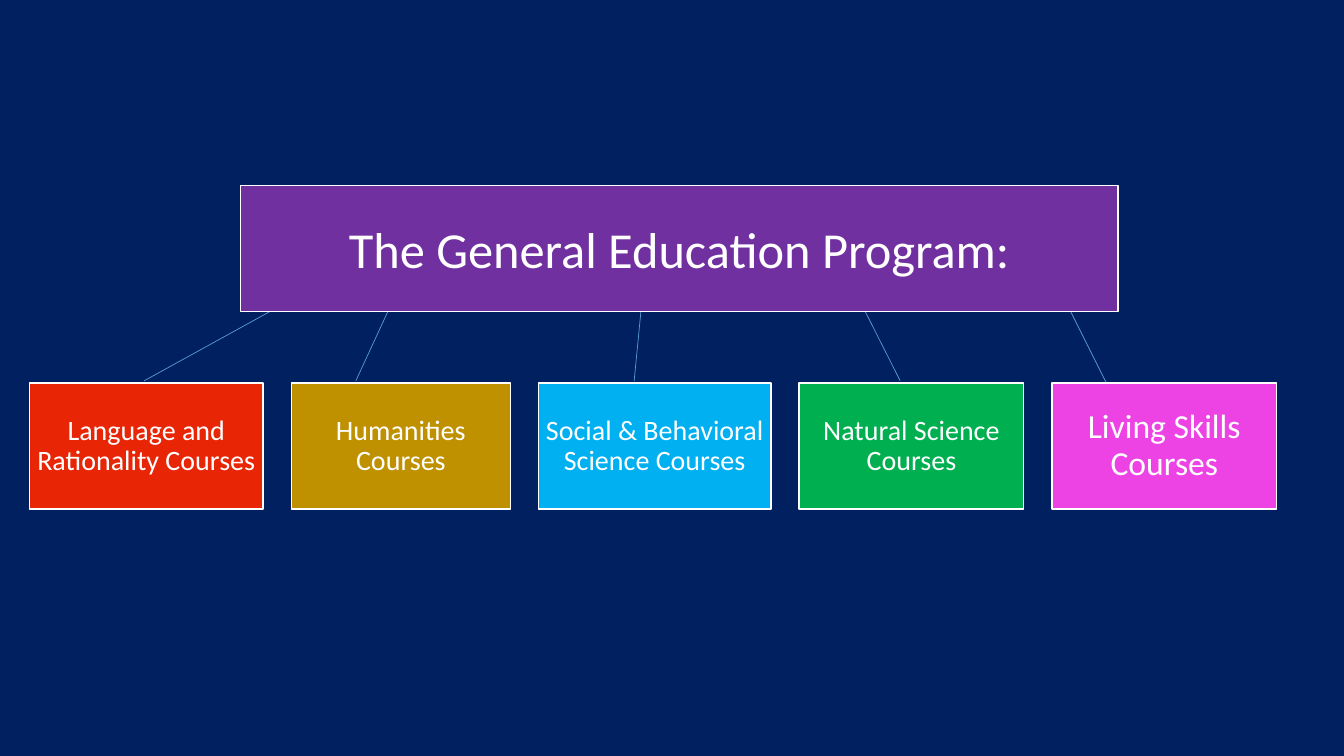
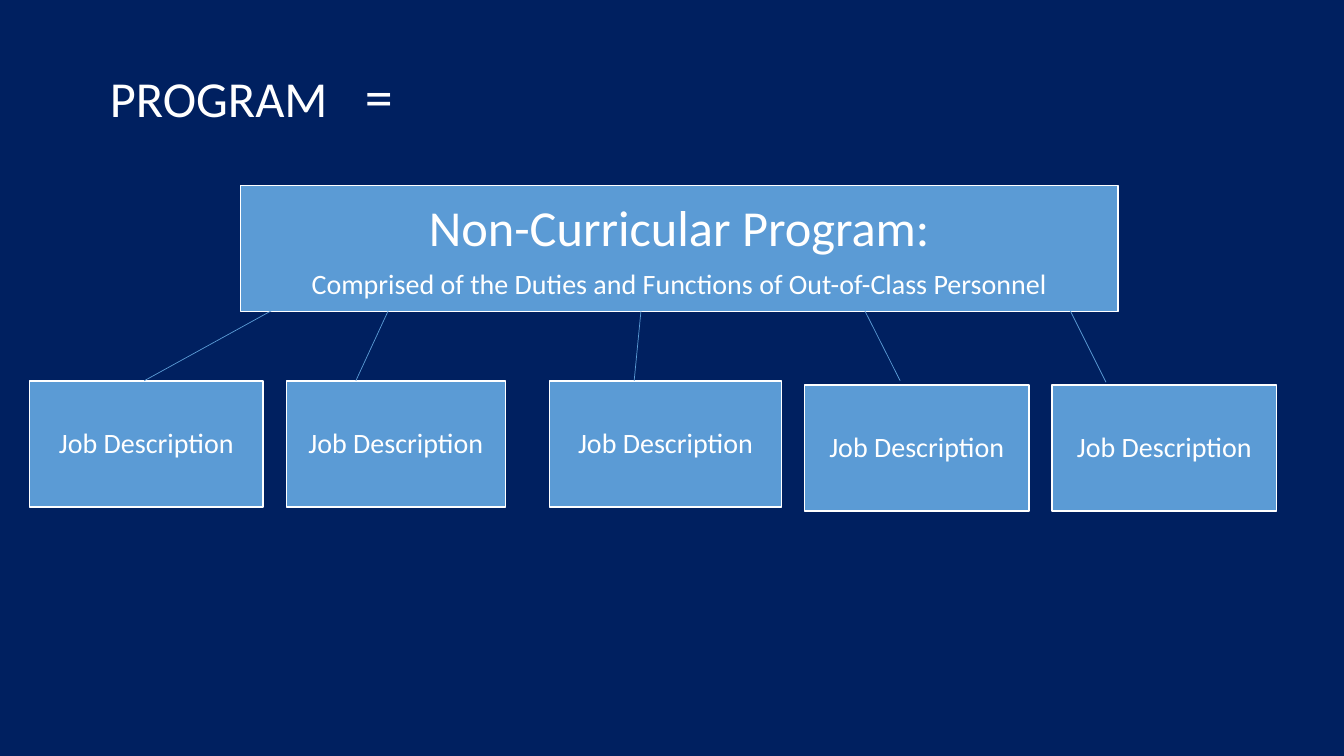
"""Builds two slides that show programs as trees of parts."""
from dataclasses import dataclass

from lxml import etree
from pptx import Presentation
from pptx.dml.color import RGBColor
from pptx.enum.shapes import MSO_CONNECTOR, MSO_SHAPE
from pptx.enum.text import MSO_ANCHOR, MSO_AUTO_SIZE, PP_ALIGN
from pptx.oxml.ns import qn
from pptx.util import Pt

RECT = MSO_SHAPE.RECTANGLE
STRAIGHT = MSO_CONNECTOR.STRAIGHT
MIDDLE = MSO_ANCHOR.MIDDLE
GROW = MSO_AUTO_SIZE.SHAPE_TO_FIT_TEXT
CENTER = PP_ALIGN.CENTER


@dataclass(frozen=True)
class Theme:
    """Holds the colours, font and type sizes of the deck."""
    back: str = "002060"
    ink: str = "FFFFFF"
    blue: str = "5B9BD5"
    purple: str = "7030A0"
    red: str = "E82606"
    gold: str = "BF9000"
    sky: str = "00B0F0"
    green: str = "00B050"
    pink: str = "ED43E5"
    font: str = "Calibri"
    sign: int = 40
    title: int = 36
    large: int = 24
    body: int = 20


THEME = Theme()
HEAD = (172, 132.5, 626.5, 90)
LEFT, TOP, GAP, HIGH = 21, 273.6, 20.1, 90
WIDTHS = (167, 156.5, 166, 160.5, 160.5)
LINKS = (
    (103, 272, 212.5, 211.7),
    (254.2, 272, 278, 220.5),
    (453, 272, 458, 220.5),
    (643, 272, 617, 220.5),
    (790, 273, 764, 221),
)
COURSES = (
    ("Language and Rationality Courses", THEME.red, THEME.body),
    ("Humanities Courses", THEME.gold, THEME.body),
    ("Social & Behavioral Science Courses", THEME.sky, THEME.body),
    ("Natural Science Courses", THEME.green, THEME.body),
    ("Living Skills Courses", THEME.pink, THEME.large),
)
JOBS = (("Job Description", THEME.blue, THEME.body),) * len(WIDTHS)
LEVEL = ((0, 0),) * len(WIDTHS)
UNEVEN = ((0, -1.5), (-3.6, -1.5), (7.7, -1.5), (3.8, 1.5), (0, 1.5))


def tint(text):
    """Return the colour for a hex string."""
    return RGBColor.from_string(text)


def style(font, size):
    """Set the shared typeface and ink at one size."""
    font.name = THEME.font
    font.size = Pt(size)
    font.color.rgb = tint(THEME.ink)


def add_box(slide, place, fill, lines):
    """Add a filled box with centred lines of (text, size, spacing, after)."""
    box = slide.shapes.add_shape(RECT, *map(Pt, place))
    box.shadow.inherit = False
    box.fill.solid()
    box.fill.fore_color.rgb = tint(fill)
    box.line.color.rgb = tint(THEME.ink)
    box.line.width = Pt(1)
    frame = box.text_frame
    frame.word_wrap = True
    frame.vertical_anchor = MIDDLE
    frame.margin_left = frame.margin_right = Pt(2)
    frame.margin_top = frame.margin_bottom = Pt(2)
    for index, (text, size, space, after) in enumerate(lines):
        para = frame.add_paragraph() if index else frame.paragraphs[0]
        para.text = text
        para.alignment = CENTER
        para.line_spacing = space
        para.space_after = Pt(after)
        style(para.font, size)


def add_head(slide, fill, text, note=None):
    """Add the wide box at the top of a tree."""
    lines = [(text, THEME.title, 1.0, 10)]
    if note:
        lines.append((note, THEME.body, 0.9, 0))
    add_box(slide, HEAD, fill, lines)


def add_row(slide, parts, shifts):
    """Add the row of parts, each moved by its shift."""
    left = LEFT
    for (text, fill, size), wide, (right, down) in zip(parts, WIDTHS, shifts):
        place = (left + right, TOP + down, wide, HIGH)
        add_box(slide, place, fill, [(text, size, 0.9, 0)])
        left += wide + GAP


def add_links(slide):
    """Add the thin lines between the head and its parts."""
    for ends in LINKS:
        link = slide.shapes.add_connector(STRAIGHT, *map(Pt, ends))
        link.line.color.rgb = tint(THEME.blue)
        link.line.width = Pt(0.5)
        etree.SubElement(link._element.spPr, qn("a:effectLst"))


def add_title(slide, word, sign):
    """Add a title word and a sign set at a tab stop."""
    box = slide.shapes.add_textbox(Pt(71.5), Pt(40.5), Pt(637), Pt(55.5))
    frame = box.text_frame
    frame.word_wrap = True
    frame.auto_size = GROW
    para = frame.paragraphs[0]
    stops = etree.SubElement(para._p.get_or_add_pPr(), qn("a:tabLst"))
    etree.SubElement(stops, qn("a:tab"), pos=str(Pt(182)), algn="l")
    for text, size in ((word, THEME.title), ("\t" + sign, THEME.sign)):
        run = para.add_run()
        run.text = text
        style(run.font, size)


def main():
    """Build both slides and save the deck."""
    deck = Presentation()
    deck.slide_width, deck.slide_height = Pt(960), Pt(540)
    fill = deck.slide_master.background.fill
    fill.solid()
    fill.fore_color.rgb = tint(THEME.back)
    blank = deck.slide_layouts[6]

    slide = deck.slides.add_slide(blank)
    add_row(slide, COURSES, LEVEL)
    add_links(slide)
    add_head(slide, THEME.purple, "The General Education Program:")

    slide = deck.slides.add_slide(blank)
    add_title(slide, "PROGRAM", "=")
    add_head(slide, THEME.blue, "Non-Curricular Program:",
             "Comprised of the Duties and Functions of Out-of-Class Personnel")
    add_row(slide, JOBS, UNEVEN)
    add_links(slide)

    deck.save("out.pptx")


if __name__ == "__main__":
    main()
